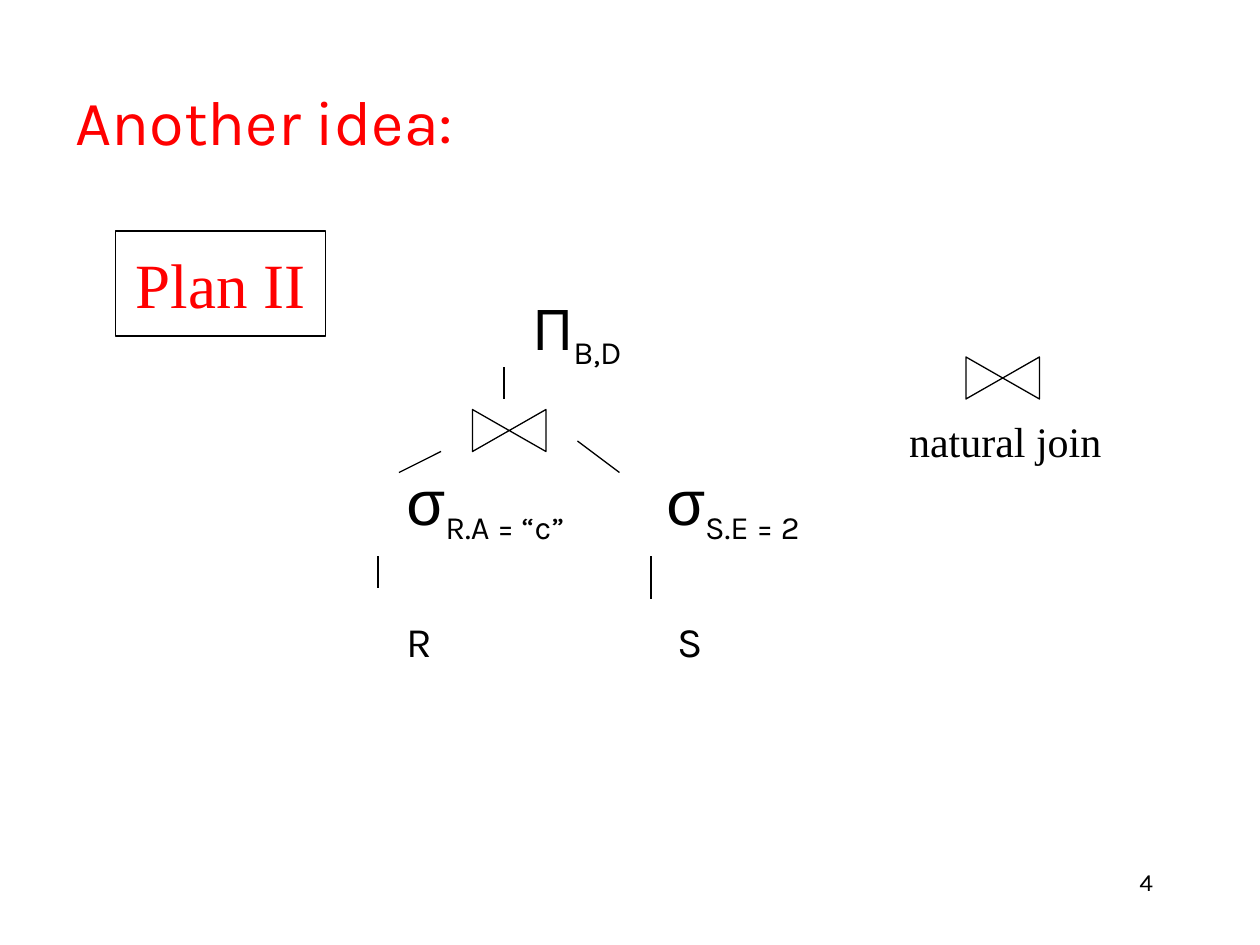
from dataclasses import dataclass
from typing import NamedTuple

from lxml.etree import SubElement
from pptx import Presentation
from pptx.dml.color import RGBColor as Color
from pptx.enum.shapes import MSO_CONNECTOR as Link, MSO_SHAPE as Kind
from pptx.enum.text import MSO_ANCHOR as Anchor, MSO_AUTO_SIZE as Fit, PP_ALIGN as Align
from pptx.oxml.ns import qn
from pptx.util import Pt


@dataclass(frozen=True)
class Theme:
    red: Color = Color(255, 0, 0)
    black: Color = Color(0, 0, 0)
    white: Color = Color(255, 255, 255)
    main: str = "Karla"
    greek: str = "Arial"
    serif: str = "Times New Roman"
    big: int = 36
    mid: int = 32
    small: int = 24
    tiny: int = 14
    line: float = 0.75


class Box(NamedTuple):
    left: float
    top: float
    width: float
    height: float


class Bit(NamedTuple):
    text: str
    size: int
    font: str
    color: Color
    sub: bool = False


class Row(NamedTuple):
    """One level of the plan tree: indent, tab step, gap above, runs."""
    indent: float
    step: float
    gap: float
    bits: tuple[Bit, ...]


class Edge(NamedTuple):
    x1: float
    y1: float
    x2: float
    y2: float


LOOK = Theme()


def sign(text: str, size: int, font: str = LOOK.main) -> Bit:
    return Bit(text, size, font, LOOK.black)


def sub(text: str) -> Bit:
    return Bit(text, LOOK.mid, LOOK.main, LOOK.black, True)


SIGMA = sign("σ", LOOK.big, LOOK.greek)
ROWS = (
    Row(243, 72, 0, (sign("Π", LOOK.mid), sub("B,D"))),
    Row(171, 148.5, 52, (
        SIGMA, sub("R.A = “c”"), sign("\t", LOOK.big), SIGMA, sub("S.E = 2"))),
    Row(171, 155, 40, (sign("R\tS", LOOK.small),)),
)
EDGES = (
    Edge(288, 210, 288, 228),
    Edge(252, 258, 228, 270),
    Edge(330, 252, 354, 270),
    Edge(216, 318, 216, 336),
    Edge(372, 318, 372, 342),
)
JOINS = (Box(279, 225, 24, 42), Box(561, 195, 24, 42))


def place(shape, box: Box) -> None:
    shape.left, shape.top, shape.width, shape.height = map(Pt, box)


def write(para, bit: Bit) -> None:
    run = para.add_run()
    run.text = bit.text
    font = run.font
    font.size, font.name = Pt(bit.size), bit.font
    font.color.rgb = bit.color
    if bit.sub:
        run._r.get_or_add_rPr().set("baseline", "-25000")


def indent(para, left: float, step: float) -> None:
    """Drop the bullet, set the left indent and the tab step after it."""
    props = para._p.get_or_add_pPr()
    props.set("marL", str(Pt(left)))
    props.set("indent", "0")
    props.set("defTabSz", str(Pt(step)))
    SubElement(props, qn("a:buNone"))


def draw_title(shape, bit: Bit) -> None:
    place(shape, Box(36, 24, 612, 90))
    frame = shape.text_frame
    frame.auto_size, frame.vertical_anchor = Fit.NONE, Anchor.MIDDLE
    para = frame.paragraphs[0]
    para.alignment = Align.LEFT
    write(para, bit)


def draw_tree(shape, rows: tuple[Row, ...]) -> None:
    place(shape, Box(54, 120, 612, 324))
    frame = shape.text_frame
    frame.auto_size, frame.margin_top = Fit.NONE, Pt(48.5)
    for i, row in enumerate(rows):
        para = frame.add_paragraph() if i else frame.paragraphs[0]
        para.space_before = Pt(row.gap)
        indent(para, row.indent, row.step)
        for bit in row.bits:
            write(para, bit)


def draw_shape(slide, kind: Kind, box: Box):
    shape = slide.shapes.add_shape(kind, *map(Pt, box))
    shape.shadow.inherit = False
    shape.fill.solid()
    shape.fill.fore_color.rgb = LOOK.white
    shape.line.color.rgb = LOOK.black
    shape.line.width = Pt(LOOK.line)
    return shape


def draw_label(slide, box: Box, bit: Bit, anchor: Anchor) -> None:
    frame = slide.shapes.add_textbox(*map(Pt, box)).text_frame
    frame.word_wrap, frame.vertical_anchor = True, anchor
    para = frame.paragraphs[0]
    para.alignment = Align.RIGHT
    write(para, bit)


def draw_edge(slide, edge: Edge) -> None:
    line = slide.shapes.add_connector(Link.STRAIGHT, *map(Pt, edge))
    line.line.color.rgb = LOOK.black
    line.line.width = Pt(LOOK.line)
    SubElement(line._element.spPr, qn("a:effectLst"))


def main() -> None:
    deck = Presentation()
    deck.slide_width, deck.slide_height = Pt(720), Pt(540)
    slide = deck.slides.add_slide(deck.slide_layouts[1])
    title, body = slide.placeholders

    draw_label(slide, Box(516, 492, 150, 36), sign("4", LOOK.tiny), Anchor.TOP)
    draw_title(title, Bit("Another idea:", LOOK.big, LOOK.main, LOOK.red))
    draw_tree(body, ROWS)

    plan = draw_shape(slide, Kind.RECTANGLE, Box(66, 132, 120, 60)).text_frame
    plan.word_wrap, plan.vertical_anchor = False, Anchor.MIDDLE
    plan.paragraphs[0].alignment = Align.CENTER
    write(plan.paragraphs[0], Bit("Plan II", LOOK.big, LOOK.serif, LOOK.red))

    for box in JOINS:
        draw_shape(slide, Kind.FLOWCHART_COLLATE, box).rotation = 270
    draw_label(slide, Box(440, 234, 196.5, 36),
               sign("natural join", LOOK.small, LOOK.serif), Anchor.MIDDLE)
    for edge in EDGES:
        draw_edge(slide, edge)
    deck.save("out.pptx")


if __name__ == "__main__":
    main()
